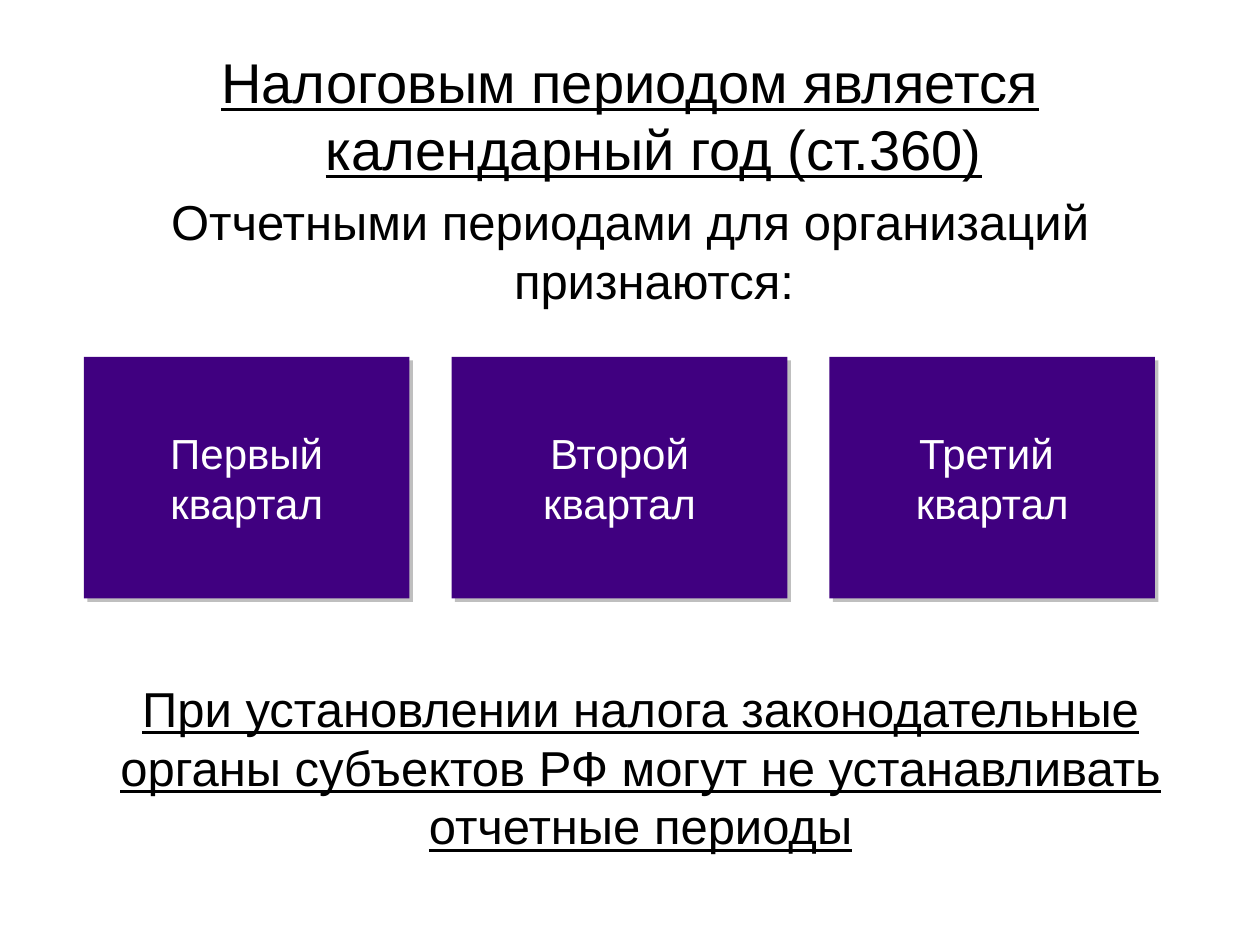
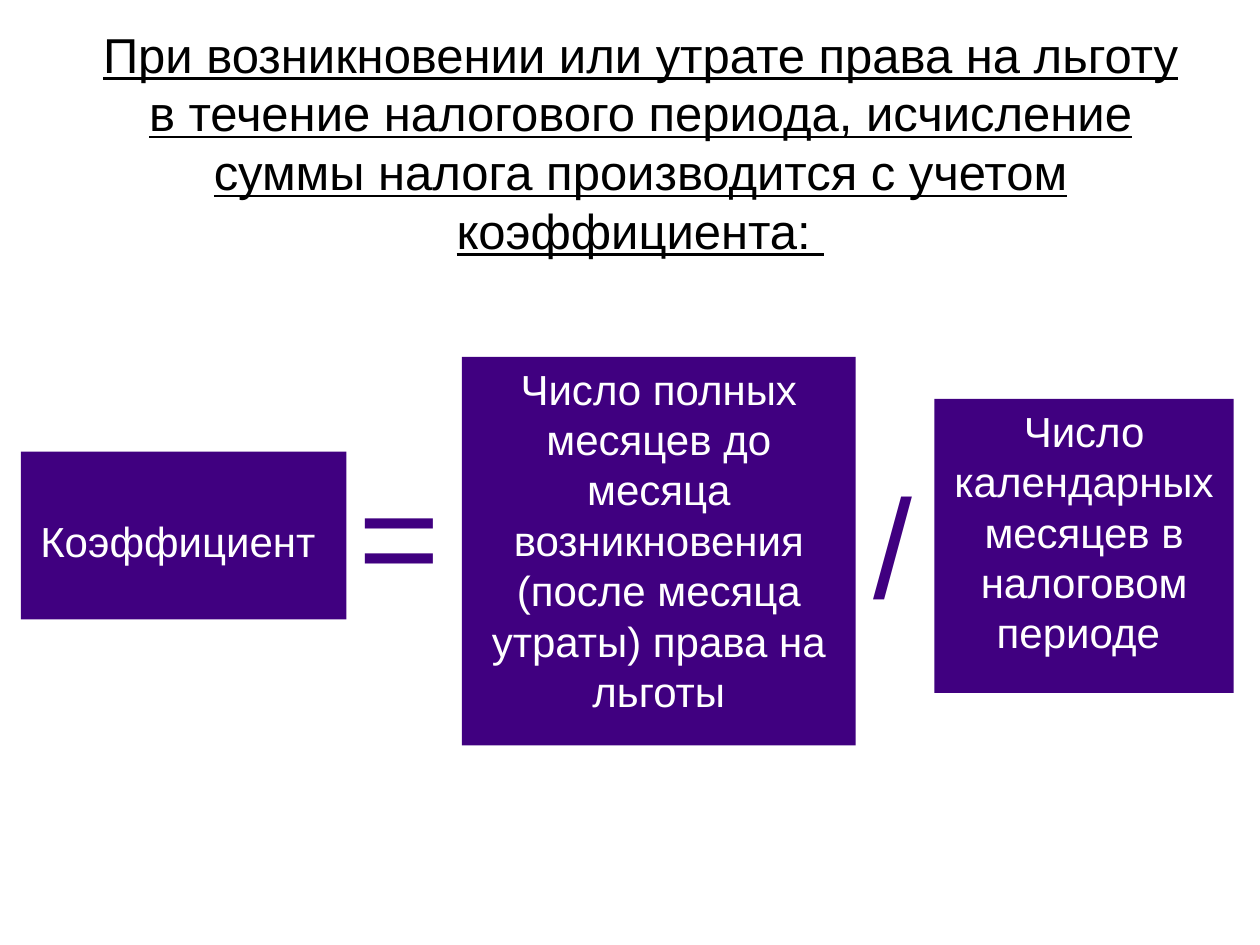
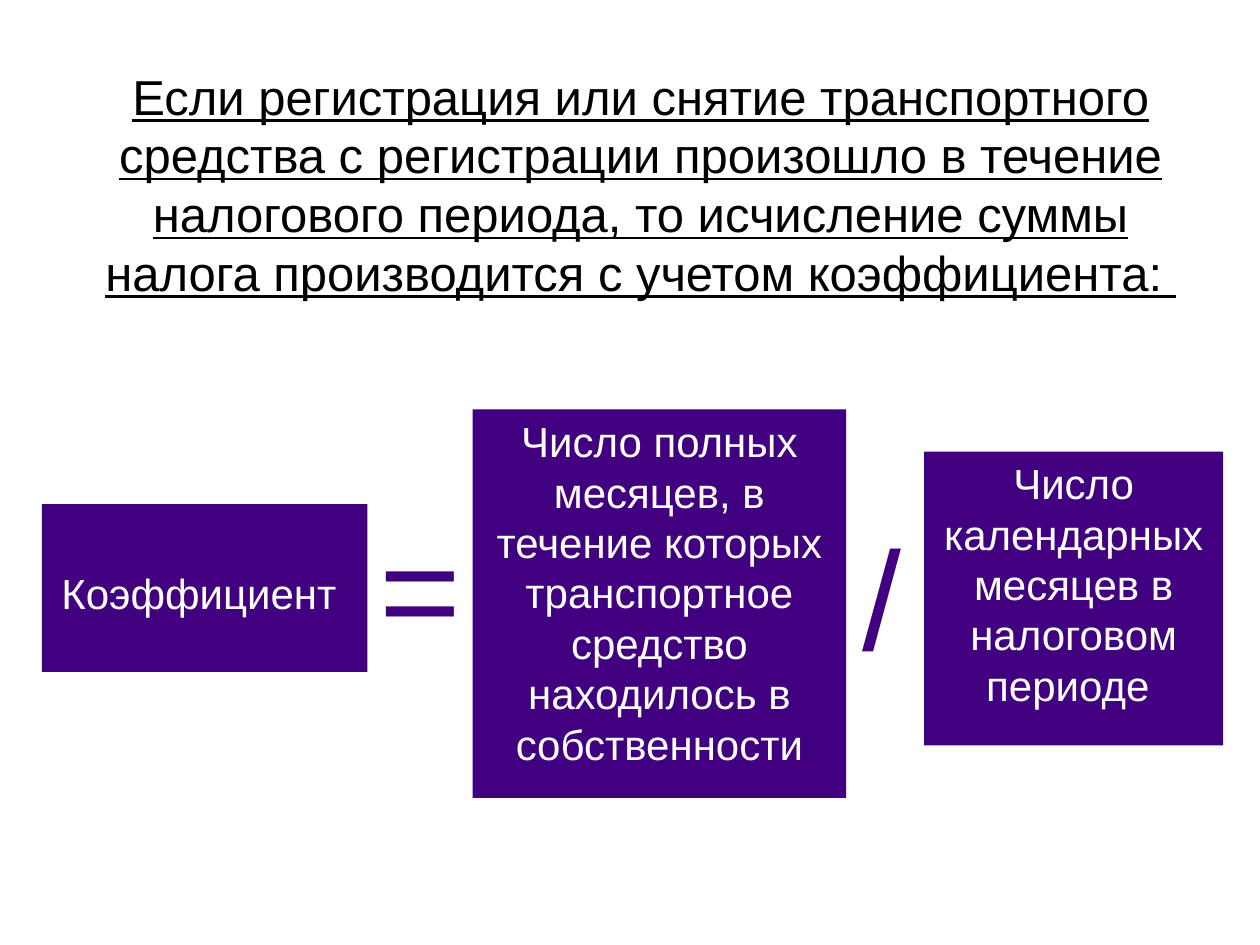
from lxml.etree import SubElement
from pptx import Presentation
from pptx.dml.color import RGBColor
from pptx.enum.shapes import MSO_SHAPE
from pptx.enum.text import MSO_ANCHOR, PP_ALIGN
from pptx.oxml.ns import qn
from pptx.util import Inches, Pt

BLACK = RGBColor(0x00, 0x00, 0x00)
WHITE = RGBColor(0xFF, 0xFF, 0xFF)
PURPLE = RGBColor(0x40, 0x00, 0x80)
SHADOW_GREY = "808080"
FONT = "Arial"
HEADING_SIZE, BLOCK_SIZE, SIGN_SIZE = 28, 24, 80

# The slide is a grid of 120 columns by 90 rows
COLUMNS, ROWS = 120, 90
deck = Presentation()
deck.slide_width, deck.slide_height = Inches(10), Inches(7.5)
column, row = deck.slide_width / COLUMNS, deck.slide_height / ROWS
blank = deck.slide_layouts[6]


def add_text(page, place, lines, size, color=BLACK, underline=False,
             anchor=MSO_ANCHOR.MIDDLE, align=PP_ALIGN.CENTER, fill=None):
    """Add a text box, or a filled rectangle when a fill is given."""
    left, top, width, height = place
    frame = (int(left * column), int(top * row), int(width * column), int(height * row))
    if fill is None:
        box = page.shapes.add_textbox(*frame)
    else:
        box = page.shapes.add_shape(MSO_SHAPE.RECTANGLE, *frame)
        box.fill.solid()
        box.fill.fore_color.rgb = fill
        box.line.fill.background()
        box.shadow.inherit = False
    box.text_frame.word_wrap = True
    box.text_frame.vertical_anchor = anchor
    box.text_frame.text = "\n".join(lines)
    for para in box.text_frame.paragraphs:
        para.alignment = align
        for span in para.runs:
            span.font.name = FONT
            span.font.size = Pt(size)
            span.font.color.rgb = color
            span.font.underline = underline
    return box


def add_shadow(box):
    """Give a shape a half-transparent grey shadow at its lower right."""
    effects = box._element.spPr.find(qn("a:effectLst"))
    shadow = SubElement(effects, qn("a:outerShdw"), blurRad="0", dist=str(Pt(2.8)),
                        dir=str(45 * 60000), algn="ctr", rotWithShape="0")
    color = SubElement(shadow, qn("a:srgbClr"), val=SHADOW_GREY)
    SubElement(color, qn("a:alpha"), val="50000")


# Slide 1: tax period and reporting periods
page = deck.slides.add_slide(blank)
intro = add_text(page, (6, 3.9, 108, 53), [
    "Налоговым периодом является календарный год (ст.360)",
    "Отчетными периодами для организаций признаются:",
], HEADING_SIZE, anchor=MSO_ANCHOR.TOP)
for para in intro.text_frame.paragraphs:
    properties = para._p.get_or_add_pPr()
    properties.set("marL", str(Inches(0.38)))
    properties.set("indent", str(-Inches(0.38)))
period, reporting = intro.text_frame.paragraphs
period.runs[0].font.size = Pt(32)
period.runs[0].font.underline = True
reporting.space_before = Pt(0.2 * HEADING_SIZE)

for left, width, ordinal in [(8, 31, "Первый"), (43, 32, "Второй"), (79, 31, "Третий ")]:
    quarter = add_text(page, (left, 34, width, 23), [ordinal, "квартал"],
                       BLOCK_SIZE, WHITE, fill=PURPLE)
    add_shadow(quarter)

add_text(page, (10, 63, 102, 20), [
    "При установлении налога законодательные органы субъектов РФ "
    "могут не устанавливать отчетные периоды"
], HEADING_SIZE, underline=True)

# Slides 2 and 3: coefficient = months counted / months in the period
# Each entry: heading, its top, middle row of the formula, block lefts,
# sign lefts, numerator width, numerator text
formulas = [
    ("При возникновении или утрате права на льготу в течение налогового периода, "
     "исчисление суммы налога производится с учетом коэффициента: ",
     2, 51, (2, 44, 89), (33, 82), 37.5,
     "Число полных месяцев до месяца возникновения (после месяца утраты) права на льготы"),
    ("Если регистрация или снятие транспортного средства с регистрации произошло "
     "в течение налогового периода, то исчисление суммы налога производится "
     "с учетом коэффициента: ",
     6, 56, (4, 45, 88), (35, 81), 35.6,
     "Число полных месяцев, в течение которых транспортное средство "
     "находилось в собственности"),
]
for heading, heading_top, middle, block_lefts, sign_lefts, numerator_width, numerator in formulas:
    page = deck.slides.add_slide(blank)
    add_text(page, (7, heading_top, 108, 23), [heading], HEADING_SIZE, underline=True)

    # Blocks of the formula
    result_left, numerator_left, denominator_left = block_lefts
    result = add_text(page, (result_left, middle - 8, 31, 16), ["Коэффициент "],
                      BLOCK_SIZE, WHITE, fill=PURPLE)
    result.text_frame.margin_top = Inches(0.13)
    for place, words in [
        ((numerator_left, middle - 17, numerator_width, 37), numerator),
        ((denominator_left, middle - 13, 28.5, 28),
         "Число календарных месяцев в налоговом периоде "),
    ]:
        add_text(page, place, [words], BLOCK_SIZE, WHITE,
                 anchor=MSO_ANCHOR.TOP, fill=PURPLE)

    # Signs between the blocks
    for left, top, width, sign in [(sign_lefts[0], middle - 9, 8, "="),
                                   (sign_lefts[1], middle - 8, 6.5, "/")]:
        add_text(page, (left, top, width, 17.3), [sign], SIGN_SIZE, PURPLE,
                 align=PP_ALIGN.LEFT)

deck.save("out.pptx")
